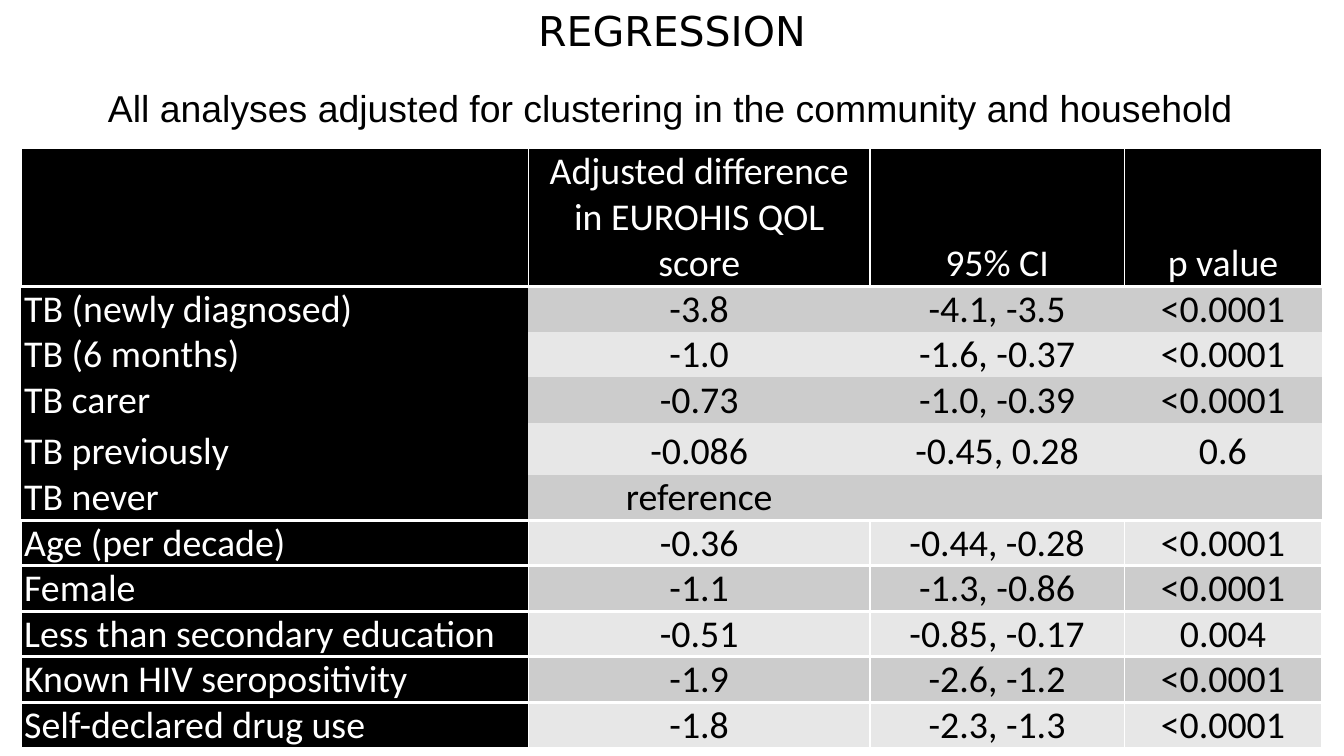
from pptx import Presentation
from pptx.dml.color import RGBColor
from pptx.enum.text import MSO_ANCHOR as Anchor, MSO_AUTO_SIZE as AutoSize, PP_ALIGN as Align
from pptx.oxml import parse_xml
from pptx.oxml.ns import nsdecls
from pptx.util import Inches, Pt

BLACK, WHITE = "000000", "FFFFFF"
BANDS = ["CCCCCC", "E7E7E7"]
COLUMN_WIDTHS = [5.03, 3.39, 2.52, 1.96]
HEADER_HEIGHT, ROW_HEIGHT, TALL_HEIGHT = 1.37, 0.45, 0.52
ROWS = [
    ["", "Adjusted difference in EUROHIS QOL score", "95% CI", "p value"],
    ["TB (newly diagnosed)", "-3.8", "-4.1, -3.5", "<0.0001"],
    ["TB (6 months)", "-1.0", "-1.6, -0.37", "<0.0001"],
    ["TB carer", "-0.73", "-1.0, -0.39", "<0.0001"],
    ["TB previously", "-0.086", "-0.45, 0.28", "0.6"],
    ["TB never", "reference", "", ""],
    ["Age (per decade)", "-0.36", "-0.44, -0.28", "<0.0001"],
    ["Female", "-1.1", "-1.3, -0.86", "<0.0001"],
    ["Less than secondary education", "-0.51", "-0.85, -0.17", "0.004"],
    ["Known HIV seropositivity", "-1.9", "-2.6, -1.2", "<0.0001"],
    ["Self-declared drug use", "-1.8", "-2.3, -1.3", "<0.0001"],
]
TB_FIRST, TB_LAST = 1, 5  # the TB rows form one block without inner lines
LAST = len(ROWS) - 1


def write(frame, text, font, size, color, align=Align.CENTER):
    frame.text = text
    frame.word_wrap = True
    para = frame.paragraphs[0]
    para.alignment = align
    for span in para.runs:
        span.font.name, span.font.size = font, Pt(size)
        span.font.color.rgb = RGBColor.from_string(color)


def add_border(cell, side, width):
    paint = f'<a:solidFill><a:srgbClr val="{WHITE}"/></a:solidFill>' if width else "<a:noFill/>"
    return parse_xml(f'<a:ln{side} {nsdecls("a")} w="{Pt(width)}">{paint}</a:ln{side}>')


deck = Presentation()
deck.slide_width, deck.slide_height = Inches(13.33), Inches(7.5)
page = deck.slides.add_slide(deck.slide_layouts[5])

# Title
title = page.shapes.title
title.left, title.top = 0, 0
title.width, title.height = deck.slide_width, Inches(0.59)
write(title.text_frame, "REGRESSION", "DejaVu Sans", 29.3, BLACK)

# Subtitle
subtitle = page.shapes.add_textbox(Inches(0.61), Inches(0.8), Inches(12.1), Inches(0.55))
write(subtitle.text_frame, "All analyses adjusted for clustering in the community and household",
      "Arial", 26.7, BLACK)

for box in (title, subtitle):
    box.text_frame.vertical_anchor = Anchor.TOP
    box.text_frame.auto_size = AutoSize.SHAPE_TO_FIT_TEXT

# Table grid
table = page.shapes.add_table(len(ROWS), len(COLUMN_WIDTHS), Inches(0.21), Inches(1.47),
                              Inches(12.9), Inches(5.94)).table
for column, width in zip(table.columns, COLUMN_WIDTHS):
    column.width = Inches(width)
for row in table.rows:
    row.height = Inches(ROW_HEIGHT)
table.rows[0].height = Inches(HEADER_HEIGHT)
table.rows[4].height = Inches(TALL_HEIGHT)

# Table cells
for r, texts in enumerate(ROWS):
    in_block = TB_FIRST <= r <= TB_LAST
    side_line = 0 if in_block else 1
    top_line = 1 if r == 0 else 0 if TB_FIRST < r <= TB_LAST else 2.25
    bottom_line = 1 if r == LAST else 0 if TB_FIRST <= r < TB_LAST else 2.25
    for c, text in enumerate(texts):
        cell = table.cell(r, c)
        dark = r == 0 or c == 0
        write(cell.text_frame, text, "Calibri", 27, WHITE if dark else BLACK,
              Align.LEFT if c == 0 else Align.CENTER)
        cell.vertical_anchor = Anchor.BOTTOM
        cell.margin_left = cell.margin_right = Inches(0.03)
        cell.margin_top = cell.margin_bottom = 0
        lines = zip("LRTB", (side_line, side_line, top_line, bottom_line))
        for side, width in lines:
            cell._tc.get_or_add_tcPr().append(add_border(cell, side, width))
        cell.fill.solid()
        cell.fill.fore_color.rgb = RGBColor.from_string(BLACK if dark else BANDS[(r - 1) % 2])

deck.save("out.pptx")
